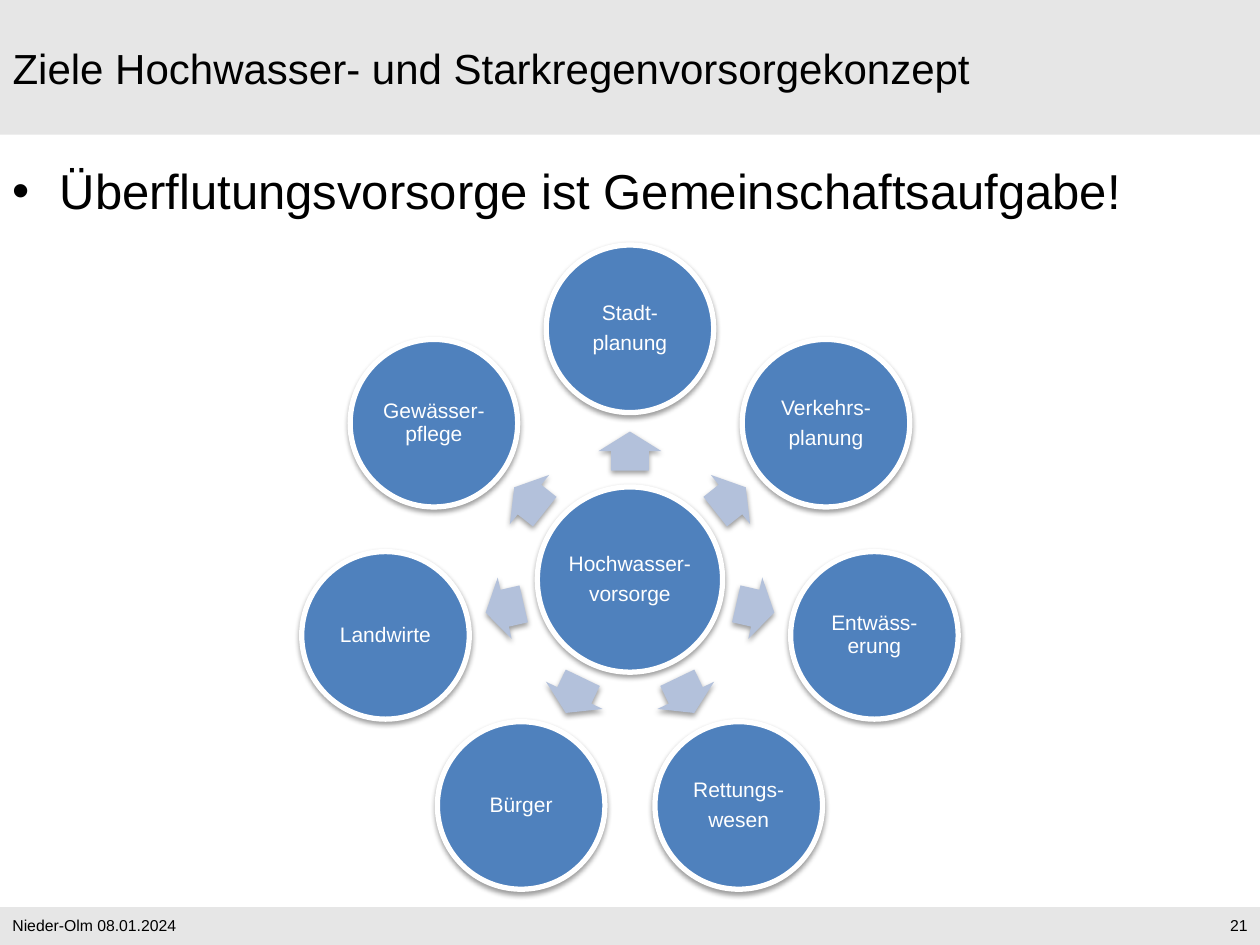
import math
import pptx
import pptx.util
import pptx.dml.color
import pptx.enum.shapes
import pptx.enum.text
import pptx.oxml
import pptx.oxml.ns

Inches, Pt = pptx.util.Inches, pptx.util.Pt
MSO = pptx.enum.shapes.MSO_SHAPE
ALIGN = pptx.enum.text.PP_ALIGN

# Content
TITLE = "Ziele Hochwasser- und Starkregenvorsorgekonzept"
CLAIM = "Überflutungsvorsorge ist Gemeinschaftsaufgabe!"
FOOTER, PAGE = "Nieder-Olm 08.01.2024", "21"
HUB = "Hochwasser-\nvorsorge"
PARTNERS = [  # clockwise from the top
    "Stadt-\nplanung", "Verkehrs-\nplanung", "Entwäss-erung", "Rettungs-\nwesen",
    "Bürger", "Landwirte", "Gewässer-pflege",
]

# Theme
THEME = {
    "font": "Arial", "bar": "E6E6E6", "ink": "000000", "paper": "FFFFFF",
    "node": "4F81BD", "arrow": "B3C1DB",
    "title": 24, "claim": 28, "label": 12, "footer": 9,
}

# Geometry in inches
W, H = 10, 7.5
HEAD_H, FOOT_H = 1.07, 0.3
CX, CY = W / 2, 4.6
HUB_D, NODE_D = 1.47, 1.33
NODE_R, ARROW_R = 1.99, 1.02
ARROW_W, ARROW_H = 0.31, 0.5


def rgb(name):
    return pptx.dml.color.RGBColor.from_string(THEME[name])


def write(shape, text, size, color="ink", align=ALIGN.LEFT, after=0, spacing=1.0):
    tf = shape.text_frame
    tf.text = text
    tf.word_wrap = True
    tf.auto_size = pptx.enum.text.MSO_AUTO_SIZE.NONE
    tf.vertical_anchor = pptx.enum.text.MSO_ANCHOR.MIDDLE
    for p in tf.paragraphs:
        p.alignment, p.line_spacing = align, spacing
        p.space_before, p.space_after = Pt(0), Pt(after)
        for r in p.runs:
            r.font.name, r.font.size = THEME["font"], Pt(THEME[size])
            r.font.color.rgb = rgb(color)
    return tf


def place(shape, x, y, w, h):
    shape.left, shape.top, shape.width, shape.height = map(Inches, (x, y, w, h))


def add_centred(s, kind, x, y, w, h, fill):
    sp = s.shapes.add_shape(kind, *map(Inches, (x - w / 2, y - h / 2, w, h)))
    sp.fill.solid()
    sp.fill.fore_color.rgb = rgb(fill)
    sp.line.fill.background()
    sp.shadow.inherit = False
    return sp


def add_shadow(sp):
    effects = sp.element.spPr.find(pptx.oxml.ns.qn("a:effectLst"))
    effects.append(pptx.oxml.parse_xml(
        f'<a:outerShdw {pptx.oxml.ns.nsdecls("a")} blurRad="{Pt(3.1)}" dist="{Pt(1.6)}" '
        'dir="5400000" rotWithShape="0"><a:srgbClr val="000000">'
        '<a:alpha val="38000"/></a:srgbClr></a:outerShdw>'))


def add_node(s, text, x, y, d):
    sp = add_centred(s, MSO.OVAL, x, y, d, d, "node")
    sp.line.color.rgb, sp.line.width = rgb("paper"), Pt(3)
    add_shadow(sp)
    tf = write(sp, text, "label", "paper", ALIGN.CENTER, after=4.2, spacing=0.9)
    tf.margin_left = tf.margin_right = tf.margin_top = tf.margin_bottom = Inches(0.02)


def add_arrow(s, x, y, rotation):
    sp = add_centred(s, MSO.RIGHT_ARROW, x, y, ARROW_W, ARROW_H, "arrow")
    sp.adjustments[0], sp.adjustments[1] = 0.6, 0.5
    sp.rotation = rotation
    add_shadow(sp)


def main():
    prs = pptx.Presentation()
    prs.slide_width, prs.slide_height = Inches(W), Inches(H)
    s = prs.slides.add_slide(prs.slide_layouts[1])
    title, body = s.placeholders

    # Grey bars behind the text
    for y, h in ((HEAD_H / 2, HEAD_H), (H - FOOT_H / 2, FOOT_H)):
        bar = add_centred(s, MSO.RECTANGLE, W / 2, y, W, h, "bar")
        s.shapes.element.insert(2, bar.element)

    # Title and claim
    place(title, 0, 0, 8.23, HEAD_H)
    write(title, TITLE, "title")
    place(body, 0, 1.08, W, 0.86)
    body.text_frame.text = CLAIM
    pPr = body.text_frame.paragraphs[0]._p.get_or_add_pPr()
    pPr.set("marL", "0")
    pPr.set("indent", "0")
    pPr.append(pptx.oxml.parse_xml(f'<a:buNone {pptx.oxml.ns.nsdecls("a")}/>'))
    write(body, CLAIM, "claim")

    # Footer
    for text, x, w, align in ((FOOTER, 0, 7.68, ALIGN.LEFT), (PAGE, 9.25, 0.75, ALIGN.RIGHT)):
        box = s.shapes.add_textbox(*map(Inches, (x, 7.22, w, 0.24)))
        write(box, text, "footer", align=align)

    # Hub with partners around it
    add_node(s, HUB, CX, CY, HUB_D)
    for i, text in enumerate(PARTNERS):
        degrees = 360 * i / len(PARTNERS) - 90
        dx, dy = math.cos(math.radians(degrees)), math.sin(math.radians(degrees))
        add_arrow(s, CX + ARROW_R * dx, CY + ARROW_R * dy, degrees % 360)
        add_node(s, text, CX + NODE_R * dx, CY + NODE_R * dy, NODE_D)

    prs.save("out.pptx")


if __name__ == "__main__":
    main()
